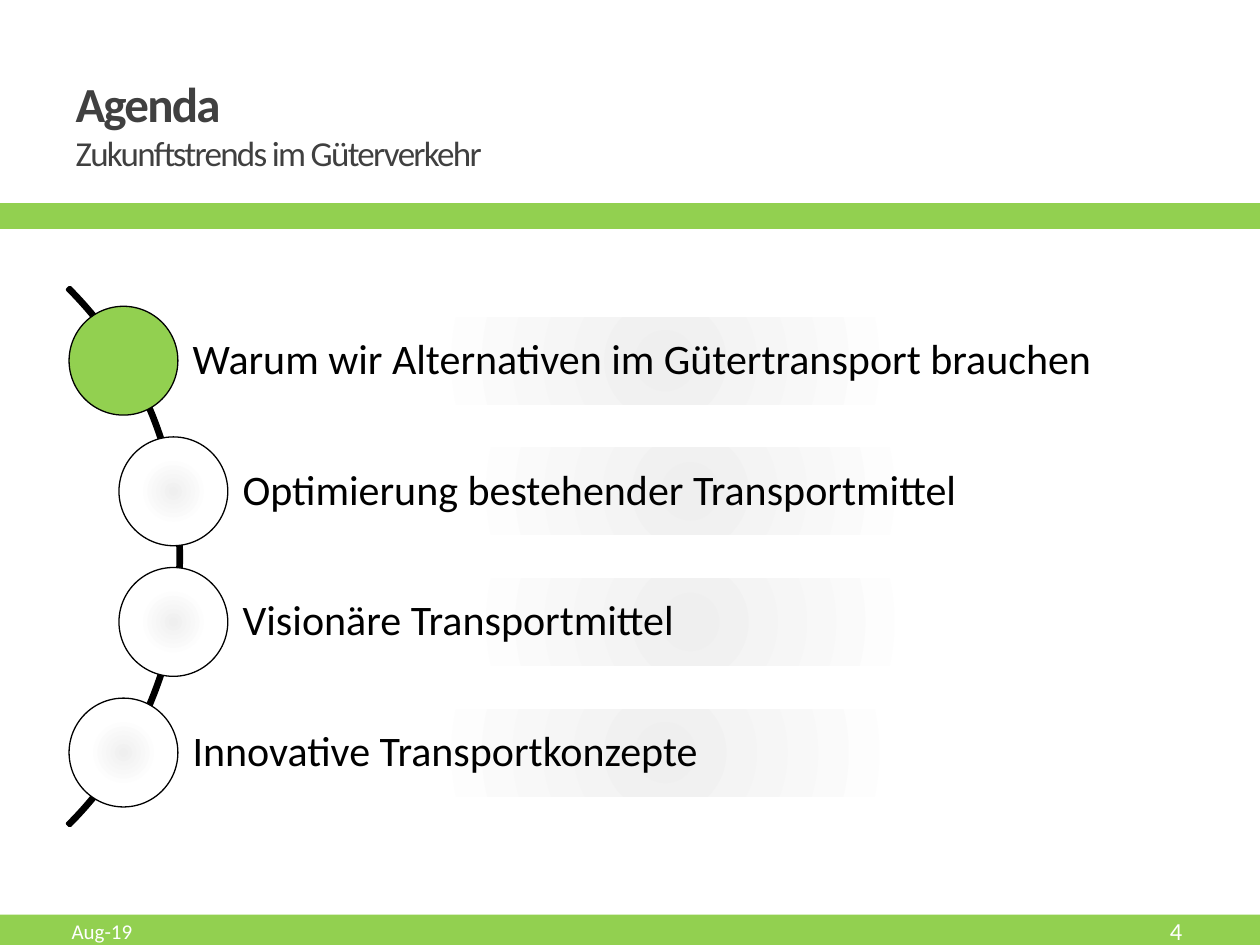
from dataclasses import dataclass

from lxml.etree import SubElement
from pptx import Presentation
from pptx.dml.color import RGBColor
from pptx.enum.shapes import MSO_SHAPE as Shape
from pptx.enum.text import MSO_ANCHOR as Anchor, MSO_AUTO_SIZE as AutoSize, PP_ALIGN as Align
from pptx.oxml.ns import qn
from pptx.util import Pt


@dataclass(frozen=True)
class Theme:
    font: str = "Calibri"
    green: str = "92D050"
    white: str = "FFFFFF"
    black: str = "000000"
    heading: str = "404040"
    glow: str = "EFEFEF"
    title_size: int = 28
    subtitle_size: int = 20
    item_size: int = 24
    number_size: int = 14
    date_size: int = 12


THEME = Theme()
ITEMS = [
    "Warum wir Alternativen im Gütertransport brauchen",
    "Optimierung bestehender Transportmittel",
    "Visionäre Transportmittel",
    "Innovative Transportkonzepte",
]


def style_run(r, size, color, bold=False):
    r.font.name = THEME.font
    r.font.size = Pt(size)
    r.font.bold = bold
    r.font.color.rgb = RGBColor.from_string(color)


def add_shape(s, kind, x, y, w, h, fill=None, line=None, weight=0.75):
    sp = s.shapes.add_shape(kind, Pt(x), Pt(y), Pt(w), Pt(h))
    sp.shadow.inherit = False
    if fill:
        sp.fill.solid()
        sp.fill.fore_color.rgb = RGBColor.from_string(fill)
    else:
        sp.fill.background()
    if line:
        sp.line.color.rgb = RGBColor.from_string(line)
        sp.line.width = Pt(weight)
    else:
        sp.line.fill.background()
    return sp


def fill_glow(sp):
    sp.fill.gradient()
    grad = sp._element.spPr.find(qn("a:gradFill"))
    for child in list(grad):
        grad.remove(child)
    stops = SubElement(grad, qn("a:gsLst"))
    for pos, color in ((0, THEME.glow), (45000, THEME.white), (100000, THEME.white)):
        stop = SubElement(stops, qn("a:gs"), pos=str(pos))
        SubElement(stop, qn("a:srgbClr"), val=color)
    radial = SubElement(grad, qn("a:path"), path="circle")
    SubElement(radial, qn("a:fillToRect"), {side: "100000" for side in "ltrb"})


def add_header(s, x, y, w, h):
    title = s.shapes.title
    title.left, title.top, title.width, title.height = Pt(x), Pt(y), Pt(w), Pt(h)
    tf = title.text_frame
    tf.text = "Agenda\vZukunftstrends im Güterverkehr"
    tf.auto_size = AutoSize.NONE
    tf.vertical_anchor = Anchor.MIDDLE
    p = tf.paragraphs[0]
    p.alignment = Align.LEFT
    heading, subtitle = p.runs
    style_run(heading, THEME.title_size, THEME.heading, bold=True)
    style_run(subtitle, THEME.subtitle_size, THEME.heading)
    for r in p.runs:
        r.font._element.set("spc", "-100")
    SubElement(p._p.find(qn("a:br")), qn("a:rPr"), sz=str(THEME.title_size * 100))


def add_agenda(s, x, y, w, h):
    pitch = h / (len(ITEMS) + 1)
    bar = pitch * 2 / 3
    dot = bar * 1.25
    arc_size = 434.9
    arc = add_shape(s, Shape.BLOCK_ARC, x + 64.1 - arc_size, y + (h - arc_size) / 2,
                    arc_size, arc_size, line=THEME.black, weight=2.08)
    for i, value in enumerate((189, 27, 0.004)):
        arc.adjustments[i] = value

    for i, text in enumerate(ITEMS):
        center_y = y + pitch * (i + 1)
        shift = 28.5 if 0 < i < len(ITEMS) - 1 else 0
        left = x + shift + dot / 2
        sp = add_shape(s, Shape.RECTANGLE, left, center_y - bar / 2, x + w - left, bar)
        fill_glow(sp)
        tf = sp.text_frame
        tf.text = text
        tf.word_wrap = True
        tf.vertical_anchor = Anchor.MIDDLE
        tf.margin_left = Pt(39.5)
        tf.margin_top = tf.margin_right = tf.margin_bottom = Pt(4.8)
        p = tf.paragraphs[0]
        p.alignment = Align.LEFT
        p.line_spacing = 0.9
        style_run(p.runs[0], THEME.item_size, THEME.black)

        marker = add_shape(s, Shape.OVAL, x + shift, center_y - dot / 2, dot, dot,
                           fill=THEME.green, line=THEME.black)
        if i > 0:
            fill_glow(marker)


def add_label(s, text, x, y, w, h, size, align):
    tf = s.shapes.add_textbox(Pt(x), Pt(y), Pt(w), Pt(h)).text_frame
    tf.text = text
    tf.word_wrap = True
    tf.vertical_anchor = Anchor.MIDDLE
    p = tf.paragraphs[0]
    p.alignment = align
    style_run(p.runs[0], size, THEME.white)


def add_footer(s, x, y, w, h):
    add_shape(s, Shape.RECTANGLE, x, y, w, h, fill=THEME.green)
    add_label(s, "Aug-19", x + 36.7, y - 3.6, 228, 26, THEME.date_size, Align.LEFT)
    add_label(s, "4", x + 601.2, y - 3.6, 84.4, 26, THEME.number_size, Align.RIGHT)


def main():
    prs = Presentation()
    prs.slide_width, prs.slide_height = Pt(720), Pt(540)
    s = prs.slides.add_slide(prs.slide_layouts[5])
    add_header(s, 36, 31.7, 375, 77.8)
    add_shape(s, Shape.RECTANGLE, 0, 116.8, 728.6, 13, THEME.green, THEME.green, 2.08)
    add_agenda(s, 39.5, 131.5, 650.3, 373.2)
    add_footer(s, -2.9, 522.7, 731.5, 36)
    prs.save("out.pptx")


if __name__ == "__main__":
    main()
